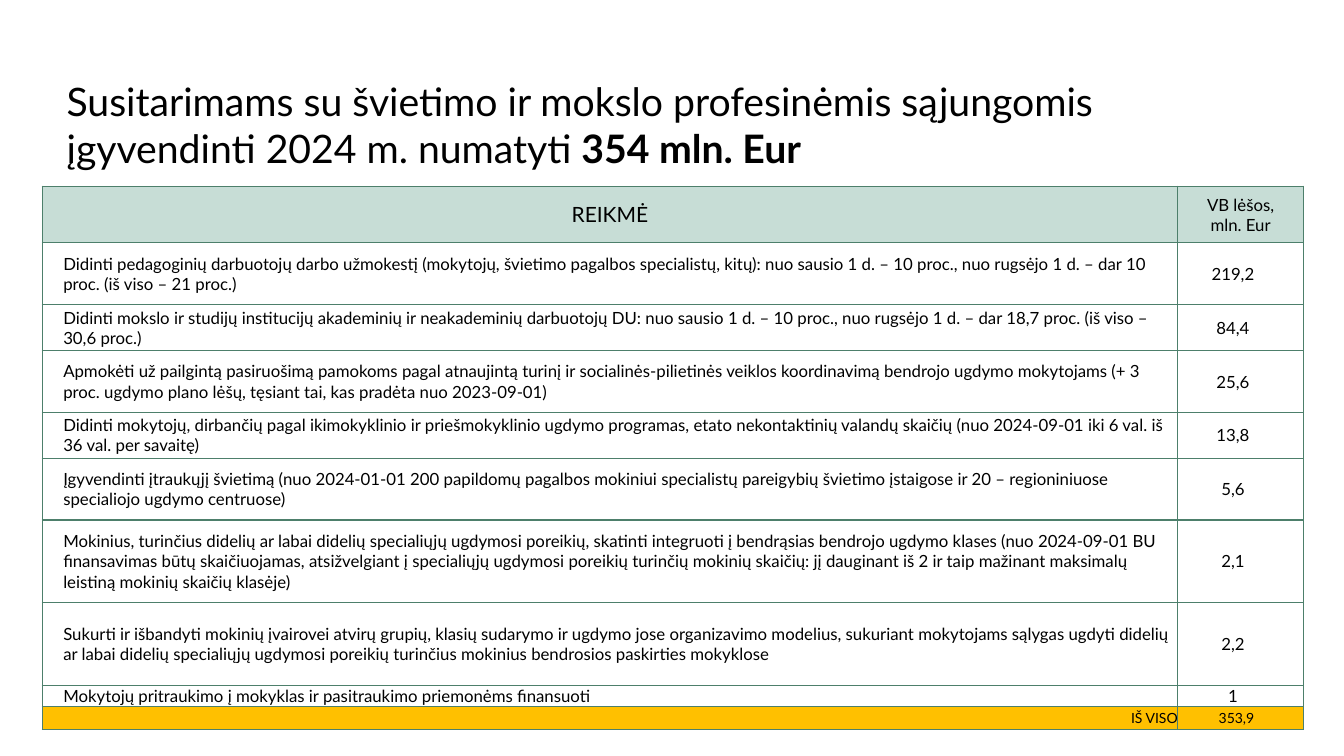
from lxml.etree import SubElement
from pptx import Presentation
from pptx.dml.color import RGBColor
from pptx.enum.text import MSO_ANCHOR as Anchor, PP_ALIGN as Align
from pptx.oxml.ns import qn
from pptx.util import Pt

TITLE = [
    ("Susitarimams su švietimo ir mokslo profesinėmis sąjungomis įgyvendinti 2024 m. numatyti ", False),
    ("354 mln. Eur", True),
]
HEADER = ("REIKMĖ", "VB lėšos,\nmln. Eur")
NEEDS = [  # need, amount in millions, row height
    ("Didinti pedagoginių darbuotojų darbo užmokestį (mokytojų, švietimo pagalbos specialistų, kitų): "
     "nuo sausio 1 d. – 10 proc., nuo rugsėjo 1 d. – dar 10 proc. (iš viso – 21 proc.)", "219,2", 44),
    ("Didinti mokslo ir studijų institucijų akademinių ir neakademinių darbuotojų DU: "
     "nuo sausio 1 d. – 10 proc., nuo rugsėjo 1 d. – dar 18,7 proc. (iš viso – 30,6 proc.)", "84,4", 33),
    ("Apmokėti už pailgintą pasiruošimą pamokoms pagal atnaujintą turinį ir socialinės-pilietinės veiklos "
     "koordinavimą bendrojo ugdymo mokytojams (+ 3 proc. ugdymo plano lėšų, tęsiant tai, "
     "kas pradėta nuo 2023-09-01)", "25,6", 44),
    ("Didinti mokytojų, dirbančių pagal ikimokyklinio ir priešmokyklinio ugdymo programas, etato "
     "nekontaktinių valandų skaičių (nuo 2024-09-01 iki 6 val. iš 36 val. per savaitę)", "13,8", 33),
    ("Įgyvendinti įtraukųjį švietimą (nuo 2024-01-01 200 papildomų pagalbos mokiniui specialistų "
     "pareigybių švietimo įstaigose ir 20 – regioniniuose specialiojo ugdymo centruose)", "5,6", 44),
    ("Mokinius, turinčius didelių ar labai didelių specialiųjų ugdymosi poreikių, skatinti integruoti į "
     "bendrąsias bendrojo ugdymo klases (nuo 2024-09-01 BU finansavimas būtų skaičiuojamas, atsižvelgiant "
     "į specialiųjų ugdymosi poreikių turinčių mokinių skaičių: jį dauginant iš 2 ir taip mažinant "
     "maksimalų leistiną mokinių skaičių klasėje)", "2,1", 59),
    ("Sukurti ir išbandyti mokinių įvairovei atvirų grupių, klasių sudarymo ir ugdymo jose organizavimo "
     "modelius, sukuriant mokytojams sąlygas ugdyti didelių ar labai didelių specialiųjų ugdymosi poreikių "
     "turinčius mokinius bendrosios paskirties mokyklose", "2,2", 59),
    ("Mokytojų pritraukimo į mokyklas ir pasitraukimo priemonėms finansuoti", "1", 15),
]
TOTAL = ("IŠ VISO", "353,9")

FONT = "Lato"
BLACK, WHITE, MINT, GREEN, AMBER = "000000", "FFFFFF", "C7DDD6", "4D7F6B", "FFC000"
COLUMNS = (811, 90)
HEADER_HEIGHT, TOTAL_HEIGHT = 40.5, 16.5
INDENT = 15


def color(code):
    return RGBColor.from_string(code)


def add_text(para, text, size=12, bold=False, align=Align.LEFT):
    para.alignment = align
    span = para.add_run()
    span.text = text
    span.font.name, span.font.size, span.font.bold = FONT, Pt(size), bold
    span.font.color.rgb = color(BLACK)


def add_borders(cell):
    properties = cell._tc.get_or_add_tcPr()
    for side in ("lnL", "lnR", "lnT", "lnB"):
        line = SubElement(properties, qn(f"a:{side}"), w=str(Pt(1)))
        SubElement(SubElement(line, qn("a:solidFill")), qn("a:srgbClr"), val=GREEN)


def fill_cell(cell, text, fill=WHITE, left=0, right=0, **text_format):
    add_borders(cell)
    cell.fill.solid()
    cell.fill.fore_color.rgb = color(fill)
    cell.vertical_anchor = Anchor.MIDDLE
    cell.margin_left, cell.margin_right = Pt(left), Pt(right)
    cell.margin_top = cell.margin_bottom = 0
    frame = cell.text_frame
    for index, line in enumerate(text.split("\n")):
        para = frame.add_paragraph() if index else frame.paragraphs[0]
        add_text(para, line, **text_format)


def add_title(slide):
    box = slide.shapes.add_textbox(Pt(40.5), Pt(52), Pt(824.5), Pt(75))
    box.text_frame.word_wrap = True
    for text, bold in TITLE:
        add_text(box.text_frame.paragraphs[0], text, size=28, bold=bold)


def add_needs_table(slide):
    heights = [HEADER_HEIGHT, *(height for _, _, height in NEEDS), TOTAL_HEIGHT]
    table = slide.shapes.add_table(
        len(heights), len(COLUMNS), Pt(30.2), Pt(133), Pt(sum(COLUMNS)), Pt(sum(heights))).table
    for column, width in zip(table.columns, COLUMNS):
        column.width = Pt(width)
    for row, height in zip(table.rows, heights):
        row.height = Pt(height)

    for column, (text, size) in enumerate(zip(HEADER, (15, 12))):
        fill_cell(table.cell(0, column), text, fill=MINT, size=size, align=Align.CENTER)
    for row, (need, amount, _) in enumerate(NEEDS, 1):
        fill_cell(table.cell(row, 0), need, left=INDENT)
        fill_cell(table.cell(row, 1), amount, right=11, align=Align.CENTER)
    last = len(heights) - 1
    fill_cell(table.cell(last, 0), TOTAL[0], fill=AMBER, left=INDENT, size=10, align=Align.RIGHT)
    fill_cell(table.cell(last, 1), TOTAL[1], fill=AMBER, right=6, size=10, align=Align.CENTER)


def main():
    deck = Presentation()
    deck.slide_width, deck.slide_height = Pt(960), Pt(540)
    slide = deck.slides.add_slide(deck.slide_layouts[6])
    add_title(slide)
    add_needs_table(slide)
    deck.save("out.pptx")


if __name__ == "__main__":
    main()
